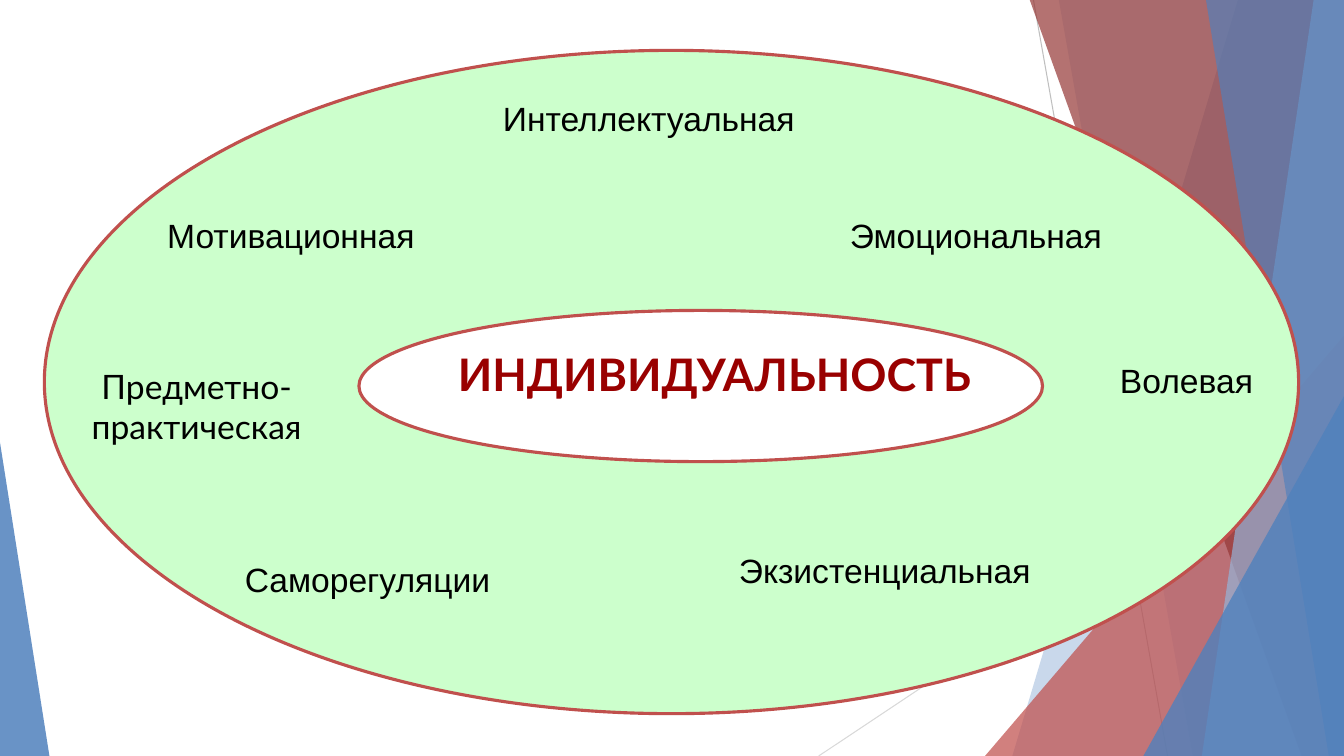
from lxml.etree import SubElement
from pptx import Presentation
from pptx.dml.color import RGBColor
from pptx.enum.shapes import MSO_CONNECTOR, MSO_SHAPE
from pptx.enum.text import MSO_ANCHOR, MSO_AUTO_SIZE, PP_ALIGN
from pptx.oxml.ns import qn
from pptx.util import Inches, Pt

WIDTH, HEIGHT = 13.33, 7.5
BLUE, RED, GREEN = "4F81BD", "C0504D", "CCFFCC"

SPHERES = [
    ("Интеллектуальная", (4.89, 0.92, 3.13, 0.5), {}),
    ("Эмоциональная", (8.33, 2.08, 2.82, 0.5), {}),
    ("Волевая", (11.01, 3.52, 1.54, 0.5), {}),
    ("Экзистенциальная", (7.23, 5.41, 3.12, 0.5), {}),
    ("Саморегуляции", (2.33, 5.5, 2.66, 0.5), {}),
    ("Предметно-\nпрактическая", (0.79, 3.58, 2.32, 0.91),
     {"font": "Lato", "align": PP_ALIGN.CENTER}),
    ("Мотивационная", (1.56, 2.08, 2.68, 0.5), {}),
]


def paint(target, color, opacity=100):
    """Set a fill to a solid hex colour with an opacity in percent."""
    target.solid()
    target.fore_color.rgb = RGBColor.from_string(color)
    if opacity < 100:
        node = target._xPr.find(f"{qn('a:solidFill')}/{qn('a:srgbClr')}")
        SubElement(node, qn("a:alpha"), val=str(opacity * 1000))


def write(frame, text, font="Arial", size=24, color="000000", bold=False,
          align=PP_ALIGN.LEFT, wrap=False):
    """Fill a text frame with one formatted paragraph per line of text."""
    frame.word_wrap = wrap
    frame.auto_size = MSO_AUTO_SIZE.SHAPE_TO_FIT_TEXT
    frame.vertical_anchor = MSO_ANCHOR.TOP
    for index, line in enumerate(text.split("\n")):
        para = frame.add_paragraph() if index else frame.paragraphs[0]
        para.alignment = align
        span = para.add_run()
        span.text = line
        span.font.name = font
        span.font.size = Pt(size)
        span.font.bold = bold
        span.font.color.rgb = RGBColor.from_string(color)


def add_ray(page, start, end, color):
    """Draw a thin straight line."""
    ray = page.shapes.add_connector(
        MSO_CONNECTOR.STRAIGHT, *map(Inches, start + end))
    ray.line.color.rgb = RGBColor.from_string(color)
    ray.line.width = Pt(0.75)
    SubElement(ray._element.spPr, qn("a:effectLst"))


def add_band(page, top_x, bottom_x, color, opacity):
    """Draw a band from a slanted left edge to the right edge of the page."""
    corners = [(WIDTH, -0.01), (WIDTH, HEIGHT), (bottom_x, HEIGHT)]
    builder = page.shapes.build_freeform(Inches(top_x), Inches(-0.01))
    builder.add_line_segments(
        [(Inches(x), Inches(y)) for x, y in corners], close=True)
    band = builder.convert_to_shape()
    band.shadow.inherit = False
    paint(band.fill, color, opacity)
    band.line.fill.background()


def add_corner(page, box, apex, color, opacity):
    """Draw a right triangle with its apex at the left (0) or right (1)."""
    corner = page.shapes.add_shape(
        MSO_SHAPE.ISOSCELES_TRIANGLE, *map(Inches, box))
    corner.adjustments[0] = apex
    corner.shadow.inherit = False
    paint(corner.fill, color, opacity)
    corner.line.fill.background()


def add_backdrop(page):
    """Draw the faceted decoration along the page edges."""
    add_ray(page, (10.25, 0), (11.58, HEIGHT), "BFBFBF")
    add_ray(page, (WIDTH, 4.03), (8.12, HEIGHT), "D9D9D9")
    add_band(page, 12.28, 10.04, BLUE, 30)
    add_band(page, 10.5, 11.83, BLUE, 20)
    add_corner(page, (9.77, 3.33, 3.56, 4.17), 1, RED, 72)
    add_band(page, 10.21, 12.91, "953735", 70)
    add_band(page, 13.03, 11.92, "95B3D7", 70)
    add_band(page, 11.96, 13.18, BLUE, 65)
    add_corner(page, (11.34, 3.93, 1.99, 3.57), 1, BLUE, 80)
    add_corner(page, (0, 4.39, 0.49, 3.11), 0, BLUE, 85)


def add_oval(page, box, color):
    """Draw a red-rimmed ellipse."""
    oval = page.shapes.add_shape(MSO_SHAPE.OVAL, *map(Inches, box))
    oval.shadow.inherit = False
    paint(oval.fill, color)
    oval.line.color.rgb = RGBColor.from_string(RED)
    oval.line.width = Pt(2.25)


def place_title(page, box, text):
    """Bring the title placeholder to the front and set it in its box."""
    title = page.shapes.title
    page.shapes._spTree.append(title._element)
    title.left, title.top, title.width, title.height = map(Inches, box)
    write(title.text_frame, text, font="Lato", size=32, color="990000",
          bold=True, wrap=True)


def add_spheres(page):
    """Place the label of each sphere around the core."""
    for text, box, style in SPHERES:
        label = page.shapes.add_textbox(*map(Inches, box))
        write(label.text_frame, text, **style)


def main():
    """Build the slide and save it."""
    deck = Presentation()
    deck.slide_width, deck.slide_height = Inches(WIDTH), Inches(HEIGHT)
    page = deck.slides.add_slide(deck.slide_layouts.get_by_name("Title Only"))
    add_backdrop(page)
    add_oval(page, (0.44, 0.5, 12.44, 6.58), GREEN)
    add_oval(page, (3.56, 3.08, 6.78, 1.5), "FFFFFF")
    place_title(page, (4.44, 3.39, 5.31, 0.64), "ИНДИВИДУАЛЬНОСТЬ")
    add_spheres(page)
    deck.save("out.pptx")


if __name__ == "__main__":
    main()
